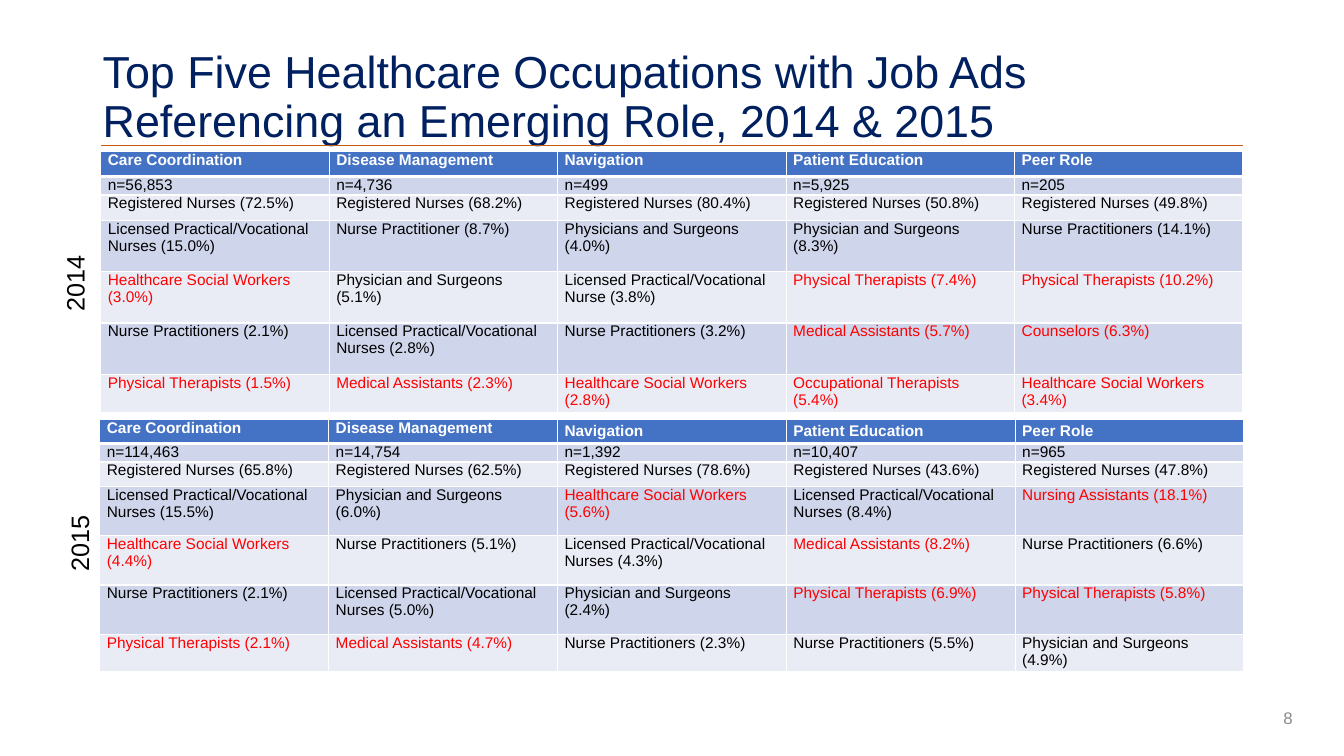
from lxml.etree import SubElement
from pptx import Presentation
from pptx.dml.color import RGBColor
from pptx.enum.shapes import MSO_CONNECTOR
from pptx.enum.text import MSO_ANCHOR, PP_ALIGN
from pptx.oxml.ns import qn
from pptx.util import Pt

# Content
TITLE = ("Top Five Healthcare Occupations with Job Ads "
         "Referencing an Emerging Role, 2014 & 2015")
PAGE = "8"
ROLES = ["Care Coordination", "Disease Management", "Navigation",
         "Patient Education", "Peer Role"]
ADS_2014 = [
    ["n=56,853", "n=4,736", "n=499", "n=5,925", "n=205"],
    ["Registered Nurses (72.5%)", "Registered Nurses (68.2%)",
     "Registered Nurses (80.4%)", "Registered Nurses (50.8%)",
     "Registered Nurses (49.8%)"],
    ["Licensed Practical/Vocational Nurses (15.0%)", "Nurse Practitioner (8.7%)",
     "Physicians and Surgeons (4.0%)", "Physician and Surgeons (8.3%)",
     "Nurse Practitioners (14.1%)"],
    ["Healthcare Social Workers (3.0%)", "Physician and Surgeons (5.1%)",
     "Licensed Practical/Vocational Nurse (3.8%)", "Physical Therapists (7.4%)",
     "Physical Therapists (10.2%)"],
    ["Nurse Practitioners (2.1%)", "Licensed Practical/Vocational Nurses (2.8%)",
     "Nurse Practitioners (3.2%)", "Medical Assistants (5.7%)",
     "Counselors (6.3%)"],
    ["Physical Therapists (1.5%)", "Medical Assistants (2.3%)",
     "Healthcare Social Workers (2.8%)", "Occupational Therapists (5.4%)",
     "Healthcare Social Workers (3.4%)"],
]
ADS_2015 = [
    ["n=114,463", "n=14,754", "n=1,392", "n=10,407", "n=965"],
    ["Registered Nurses (65.8%)", "Registered Nurses (62.5%)",
     "Registered Nurses (78.6%)", "Registered Nurses (43.6%)",
     "Registered Nurses (47.8%)"],
    ["Licensed Practical/Vocational Nurses (15.5%)", "Physician and Surgeons (6.0%)",
     "Healthcare Social Workers (5.6%)", "Licensed Practical/Vocational Nurses (8.4%)",
     "Nursing Assistants (18.1%)"],
    ["Healthcare Social Workers (4.4%)", "Nurse Practitioners (5.1%)",
     "Licensed Practical/Vocational Nurses (4.3%)", "Medical Assistants (8.2%)",
     "Nurse Practitioners (6.6%)"],
    ["Nurse Practitioners (2.1%)", "Licensed Practical/Vocational Nurses (5.0%)",
     "Physician and Surgeons (2.4%)", "Physical Therapists (6.9%)",
     "Physical Therapists (5.8%)"],
    ["Physical Therapists (2.1%)", "Medical Assistants (4.7%)",
     "Nurse Practitioners (2.3%)", "Nurse Practitioners (5.5%)",
     "Physician and Surgeons (4.9%)"],
]
# Occupations set in red
HIGHLIGHTED = ("Healthcare Social Workers", "Physical Therapists",
               "Medical Assistants", "Occupational Therapists",
               "Nursing Assistants", "Counselors")
# Year, label box, table left/top/width, row heights, middle-set headings, rows
YEARS = [
    ("2014", (-54, 261, 256, 40), (100, 150, 1133),
     (25, 18, 25, 51, 51, 51, 38), (), ADS_2014),
    ("2015", (-47, 519, 251, 40), (99, 416, 1135),
     (24, 18, 24, 49, 49, 49, 37), ROLES[2:], ADS_2015),
]
COLORS = {"title": "002060", "page": "8C8C8C", "rule": "C55A11", "head": "4472C4",
          "odd": "CFD5EA", "even": "E9EBF5", "white": "FFFFFF",
          "text": "000000", "red": "FF0000"}
FONT = "Arial"
SCALE = 9144  # EMU per px, 100 px to the inch


def px(*lengths):
    return [n * SCALE for n in lengths]


def rgb(name):
    return RGBColor.from_string(COLORS[name])


def add_run(p, text, size, color, bold=False):
    r = p.add_run()
    r.text = text
    r.font.name, r.font.size, r.font.bold = FONT, Pt(size), bold
    r.font.color.rgb = rgb(color)


def add_text(s, box, text, size, color, align, anchor=MSO_ANCHOR.TOP):
    sp = s.shapes.add_textbox(*px(*box))
    tf = sp.text_frame
    tf.word_wrap, tf.vertical_anchor = True, anchor
    p = tf.paragraphs[0]
    p.alignment = align
    add_run(p, text, size, color)
    return sp


def add_borders(cell, top, bottom):
    tc_pr = cell._tc.get_or_add_tcPr()
    for side, width in (("L", 1), ("R", 1), ("T", top), ("B", bottom)):
        ln = SubElement(tc_pr, qn(f"a:ln{side}"), w=str(Pt(width)))
        fill = SubElement(ln, qn("a:solidFill"))
        SubElement(fill, qn("a:srgbClr"), val=COLORS["white"])


def add_role_table(s, place, heights, middle, ads):
    rows = [ROLES] + ads
    left, top, width = px(*place)
    table = s.shapes.add_table(len(rows), len(ROLES), left, top, width,
                               sum(heights) * SCALE).table
    for col in table.columns:
        col.width = width // len(ROLES)
    for i, (texts, height) in enumerate(zip(rows, heights)):
        table.rows[i].height = height * SCALE
        for j, text in enumerate(texts):
            cell = table.cell(i, j)
            cell.margin_left, cell.margin_right = px(7, 7)
            cell.margin_top = cell.margin_bottom = 0
            cell.vertical_anchor = MSO_ANCHOR.MIDDLE if text in middle else MSO_ANCHOR.TOP
            add_borders(cell, top=3 if i == 1 else 1, bottom=3 if i == 0 else 1)
            cell.fill.solid()
            cell.fill.fore_color.rgb = rgb("head" if i == 0 else "odd" if i % 2 else "even")
            color = ("white" if i == 0 else
                     "red" if text.startswith(HIGHLIGHTED) else "text")
            add_run(cell.text_frame.paragraphs[0], text, 11, color, bold=i == 0)


def main():
    prs = Presentation()
    prs.slide_width, prs.slide_height = px(1333, 750)
    s = prs.slides.add_slide(prs.slide_layouts[6])

    # Title, rule and page number
    title = add_text(s, (92, 25, 1150, 145), TITLE, 32, "title",
                     PP_ALIGN.LEFT, MSO_ANCHOR.MIDDLE)
    title.text_frame.paragraphs[0].line_spacing = 0.9
    add_text(s, (992, 692, 300, 40), PAGE, 12, "page", PP_ALIGN.RIGHT, MSO_ANCHOR.MIDDLE)
    rule = s.shapes.add_connector(MSO_CONNECTOR.STRAIGHT, *px(100, 144, 1233, 144))
    rule.line.color.rgb, rule.line.width = rgb("rule"), Pt(0.5)
    SubElement(rule._element.spPr, qn("a:effectLst"))

    # One table and one turned label per year
    for year, label_box, place, heights, middle, ads in YEARS:
        add_role_table(s, place, heights, middle, ads)
        label = add_text(s, label_box, year, 18, "text", PP_ALIGN.CENTER)
        label.rotation = 270

    prs.save("out.pptx")


if __name__ == "__main__":
    main()
